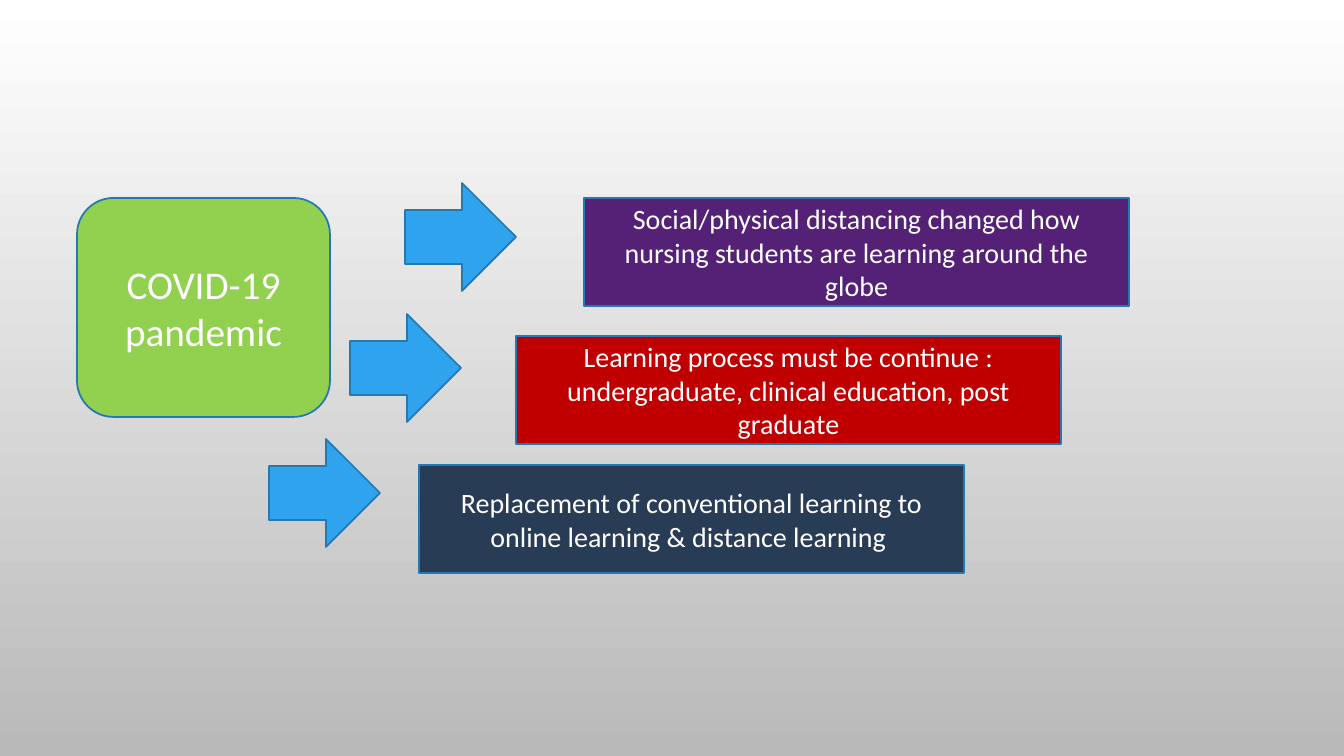
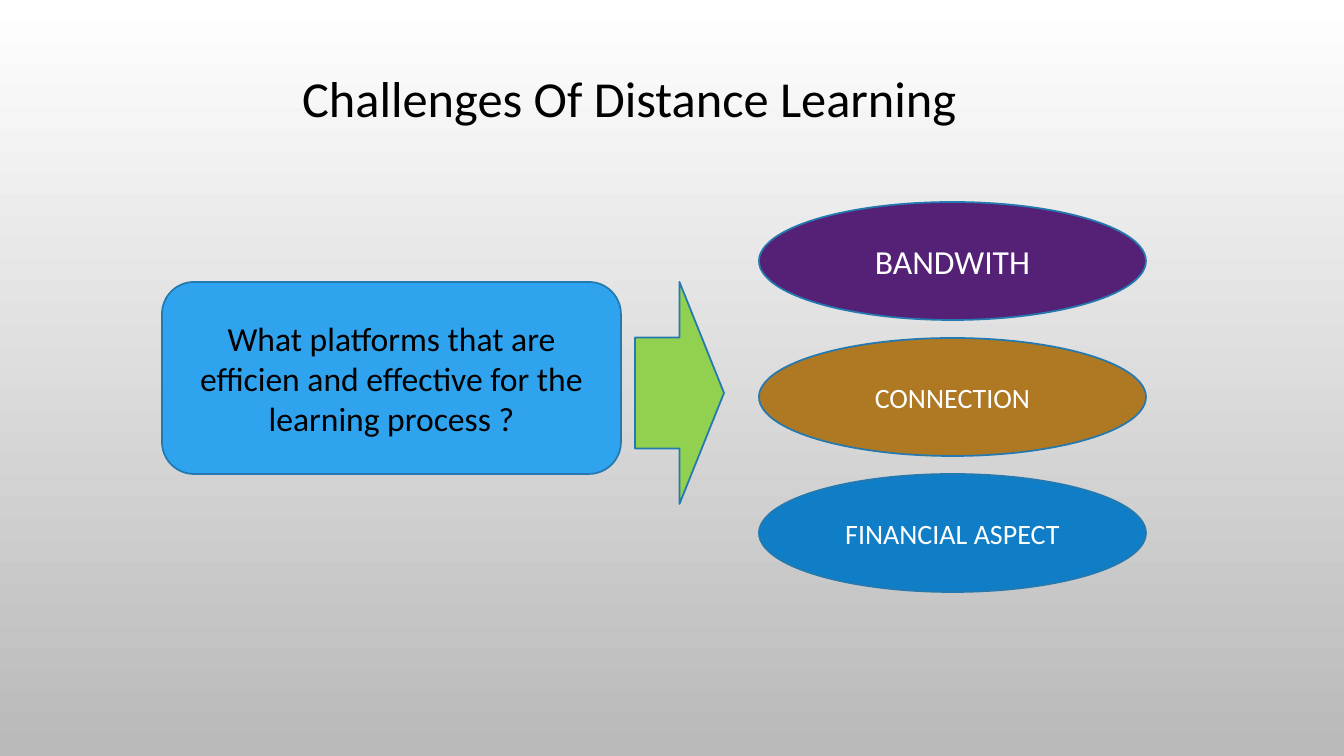
import pptx
import pptx.util
from pptx.dml.color import RGBColor
from pptx.enum.shapes import MSO_SHAPE
from pptx.enum.text import MSO_ANCHOR, PP_ALIGN

PX = 12192000 / 1344
FONT = "Calibri"
COLORS = {
    "white": "FFFFFF", "black": "000000", "gray": "B9B9B9", "outline": "2379B0",
    "sky": "2FA3EE", "green": "92D050", "purple": "542176", "red": "C00000",
    "navy": "283C55", "ochre": "AF7823", "blue": "107EC6",
}

CAUSE = "COVID-19 pandemic"
# text, fill, box left and top, arrow left and top
EFFECTS = [
    ("Social/physical distancing changed how nursing students are learning around the globe",
     "purple", (584, 198), (405, 183)),
    ("Learning process must be continue : undergraduate, clinical education, post graduate",
     "red", (516, 336), (350, 314)),
    ("Replacement of conventional learning to online learning & distance learning ",
     "navy", (419, 465), (269, 439)),
]
EFFECT_SIZE = (545, 108)
EFFECT_ARROW_SIZE = (111, 108)

TITLE = "Challenges Of Distance Learning "
QUESTION = "What platforms that are efficien and effective for the learning process ?"
# text, fill, point size
CHALLENGES = [
    ("BANDWITH", "purple", 24),
    ("CONNECTION", "ochre", 20),
    ("FINANCIAL ASPECT", "blue", 20),
]
CHALLENGE_LEFT, CHALLENGE_TOP, CHALLENGE_PITCH = 759, 202, 136
CHALLENGE_SIZE = (387, 118)


def rgb(name):
    return RGBColor.from_string(COLORS[name])


def emu(*lengths):
    return [pptx.util.Emu(round(length * PX)) for length in lengths]


def add_gradient_slide(deck):
    slide = deck.slides.add_slide(deck.slide_layouts[6])
    fill = slide.background.fill
    fill.gradient()
    fill.gradient_angle = 270
    for stop, position, color in zip(fill.gradient_stops, (0, 1), ("white", "gray")):
        stop.position = position
        stop.color.rgb = rgb(color)
    return slide


def write(shape, text, points, color):
    frame = shape.text_frame
    frame.text = text
    frame.word_wrap = True
    frame.vertical_anchor = MSO_ANCHOR.MIDDLE
    paragraph = frame.paragraphs[0]
    paragraph.alignment = PP_ALIGN.CENTER
    font = paragraph.runs[0].font
    font.name, font.size = FONT, pptx.util.Pt(points)
    font.color.rgb = rgb(color)
    return paragraph


def add_block(slide, preset, box, fill, text="", points=20, color="white"):
    block = slide.shapes.add_shape(preset, *emu(*box))
    block.shadow.inherit = False
    block.fill.solid()
    block.fill.fore_color.rgb = rgb(fill)
    block.line.color.rgb = rgb("outline")
    block.line.width = pptx.util.Pt(1.25)
    if text:
        write(block, text, points, color)


def build_effects(deck):
    slide = add_gradient_slide(deck)
    add_block(slide, MSO_SHAPE.ROUNDED_RECTANGLE, (77, 198, 253, 219), "green", CAUSE, 28)
    for text, fill, corner, arrow_corner in EFFECTS:
        add_block(slide, MSO_SHAPE.RIGHT_ARROW, arrow_corner + EFFECT_ARROW_SIZE, "sky")
        add_block(slide, MSO_SHAPE.RECTANGLE, corner + EFFECT_SIZE, fill, text)


def build_challenges(deck):
    slide = add_gradient_slide(deck)
    title = slide.shapes.add_textbox(*emu(64, 56, 1142, 90))
    write(title, TITLE, 36, "black").line_spacing = 0.9
    add_block(slide, MSO_SHAPE.ROUNDED_RECTANGLE, (162, 282, 459, 192), "sky",
              QUESTION, 24, "black")
    add_block(slide, MSO_SHAPE.RIGHT_ARROW, (635, 282, 89, 222), "green")
    for row, (text, fill, points) in enumerate(CHALLENGES):
        corner = (CHALLENGE_LEFT, CHALLENGE_TOP + row * CHALLENGE_PITCH)
        add_block(slide, MSO_SHAPE.OVAL, corner + CHALLENGE_SIZE, fill, text, points)


def main():
    deck = pptx.Presentation()
    deck.slide_width, deck.slide_height = emu(1344, 756)
    build_effects(deck)
    build_challenges(deck)
    deck.save("out.pptx")


if __name__ == "__main__":
    main()
